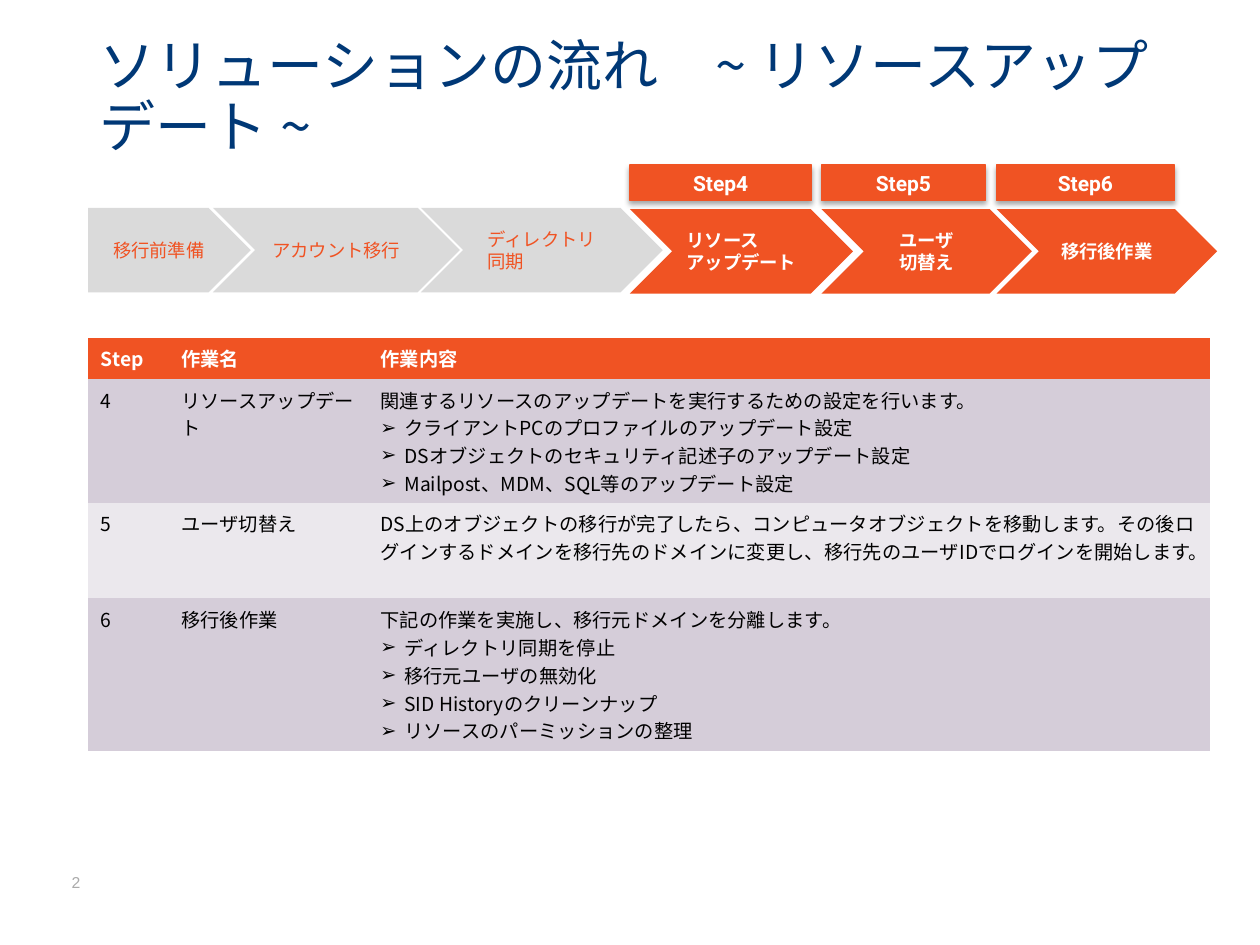
from dataclasses import dataclass
from lxml import etree
from pptx import Presentation
from pptx.dml.color import RGBColor
from pptx.enum.shapes import MSO_SHAPE
from pptx.enum.text import MSO_ANCHOR, MSO_AUTO_SIZE, PP_ALIGN
from pptx.oxml.ns import qn
from pptx.util import Inches, Pt

LEFT, CENTER = PP_ALIGN.LEFT, PP_ALIGN.CENTER
MIDDLE = MSO_ANCHOR.MIDDLE
RECT, PLATE, CHEVRON = MSO_SHAPE.RECTANGLE, MSO_SHAPE.PENTAGON, MSO_SHAPE.CHEVRON
PLAIN_STYLE = "{2D5ABB26-0587-4C30-8999-92F81FD0307C}"


@dataclass(frozen=True)
class Theme:
    orange: str = "F05323"
    white: str = "FFFFFF"
    gray: str = "DADADA"
    bands: tuple = ("D5CDD9", "EBE8ED")
    jp: str = "Noto Sans CJK JP"


T = Theme()
TITLE = dict(size=32, color="003876", name=T.jp)
NUMBER = dict(size=9, color="AAAAAA", name="Arial")
PAST = dict(size=10.5, color=T.orange, name=T.jp)
NOW = dict(size=10.5, color=T.white, name="Arial", bold=True)
TAG = dict(size=12, color=T.white, name="Roboto", bold=True)
HEAD = dict(size=11, color=T.white, name=T.jp, bold=True)
BODY = dict(size=11, color="000000", name=T.jp, bold=False)

# left, width, lines, step tag, tag width
STAGES = [
    (0.70, 1.29, ["移行前準備"], None, 0),
    (1.69, 1.96, ["アカウント移行"], None, 0),
    (3.34, 1.92, ["ディレクトリ", "同期"], None, 0),
    (5.00, 1.77, ["リソース", "アップデート"], "Step4", 1.44),
    (6.52, 1.67, ["ユーザ", "切替え"], "Step5", 1.30),
    (7.91, 1.75, ["移行後作業"], "Step6", 1.41),
]
# Each cell is a list of paragraphs; those after the first are bullets
ROWS = [
    (["Step"], ["作業名"], ["作業内容"]),
    (["4"], ["リソースアップデート"], [
        "関連するリソースのアップデートを実行するための設定を行います。",
        "クライアントPCのプロファイルのアップデート設定",
        "DSオブジェクトのセキュリティ記述子のアップデート設定",
        "Mailpost、MDM、SQL等のアップデート設定"]),
    (["5"], ["ユーザ切替え"], [
        "DS上のオブジェクトの移行が完了したら、コンピュータオブジェクトを移動します。"
        "その後ログインするドメインを移行先のドメインに変更し、"
        "移行先のユーザIDでログインを開始します。"]),
    (["6"], ["移行後作業"], [
        "下記の作業を実施し、移行元ドメインを分離します。",
        "ディレクトリ同期を停止",
        "移行元ユーザの無効化",
        "SID Historyのクリーンナップ",
        "リソースのパーミッションの整理"]),
]
COLS = [0.64, 1.58, 6.68]
HEIGHTS = [0.33, 0.98, 0.76, 1.21]


def rgb(code):
    return RGBColor.from_string(code)


def box(*lengths):
    return [Inches(n) for n in lengths]


def bullet(para):
    props = para._p.get_or_add_pPr()
    props.set("marL", str(Inches(0.19)))
    props.set("indent", str(-Inches(0.19)))
    etree.SubElement(props, qn("a:buFont"), typeface="Wingdings 3")
    etree.SubElement(props, qn("a:buChar"), char="➢")
    props[0].set("typeface", "Arial")


def write(frame, lines, style, align=LEFT, listed=False):
    for i, line in enumerate(lines):
        para = frame.paragraphs[0] if i == 0 else frame.add_paragraph()
        if listed and i:
            bullet(para)
        para.alignment = align
        run = para.add_run()
        run.text = line
        for key, value in style.items():
            if key == "color":
                run.font.color.rgb = rgb(value)
            else:
                setattr(run.font, key, Pt(value) if key == "size" else value)
        etree.SubElement(run._r.get_or_add_rPr(), qn("a:ea"), typeface=T.jp)


def block(slide, kind, place, fill):
    shape = slide.shapes.add_shape(kind, *box(*place))
    shape.shadow.inherit = False
    shape.fill.solid()
    shape.fill.fore_color.rgb = rgb(fill)
    shape.line.fill.background()
    shape.text_frame.vertical_anchor = MIDDLE
    shape.text_frame.word_wrap = True
    return shape


def drop(shape):
    """Soft black shadow straight below the shape."""
    effects = shape._element.spPr.find(qn("a:effectLst"))
    outer = etree.SubElement(effects, qn("a:outerShdw"), blurRad=str(Pt(3.1)),
                             dist=str(Pt(1.8)), dir="5400000", rotWithShape="0")
    color = etree.SubElement(outer, qn("a:srgbClr"), val="000000")
    etree.SubElement(color, qn("a:alpha"), val="35000")


def add_flow(slide):
    for i, (left, width, lines, tag, span) in enumerate(STAGES):
        arrow = block(slide, CHEVRON if i else PLATE, (left, 1.66 if tag else 1.65, width, 0.67),
                      T.orange if tag else T.gray)
        # Centres the text block while its lines stay left-aligned
        arrow.text_frame._txBody.bodyPr.set("anchorCtr", "1")
        write(arrow.text_frame, lines, NOW if tag else PAST)
        if tag:
            label = block(slide, RECT, (left, 1.31, span, 0.28), T.orange)
            label.line.color.rgb = rgb(T.orange)
            label.line.width = Pt(0.75)
            drop(label)
            write(label.text_frame, [tag], TAG, CENTER)


def add_steps(slide):
    frame = slide.shapes.add_table(len(ROWS), len(COLS), *box(0.7, 2.68, sum(COLS), sum(HEIGHTS)))
    table = frame.table
    table.first_row = table.horz_banding = False
    table._tbl.tblPr.find(qn("a:tableStyleId")).text = PLAIN_STYLE
    for col, width in zip(table.columns, COLS):
        col.width = Inches(width)
    for r, (row, height) in enumerate(zip(ROWS, HEIGHTS)):
        table.rows[r].height = Inches(height)
        for c, lines in enumerate(row):
            cell = table.cell(r, c)
            cell.fill.solid()
            cell.fill.fore_color.rgb = rgb(T.bands[(r - 1) % 2] if r else T.orange)
            write(cell.text_frame, lines, BODY if r else HEAD, listed=True)


def main():
    deck = Presentation()
    deck.slide_width, deck.slide_height = box(10, 7.5)
    slide = deck.slides.add_slide(deck.slide_layouts[5])

    title = slide.shapes.title
    title.left, title.top, title.width, title.height = box(0.69, 0.4, 8.62, 0.77)
    title.text_frame.auto_size = MSO_AUTO_SIZE.NONE
    title.text_frame.vertical_anchor = MIDDLE
    write(title.text_frame, ["ソリューションの流れ\u3000~ リソースアップデート ~"], TITLE)
    title.text_frame.paragraphs[0].line_spacing = 0.9

    number = slide.shapes.add_textbox(*box(0.47, 6.88, 0.36, 0.25))
    write(number.text_frame, ["2"], NUMBER)

    add_flow(slide)
    add_steps(slide)
    deck.save("out.pptx")


if __name__ == "__main__":
    main()
